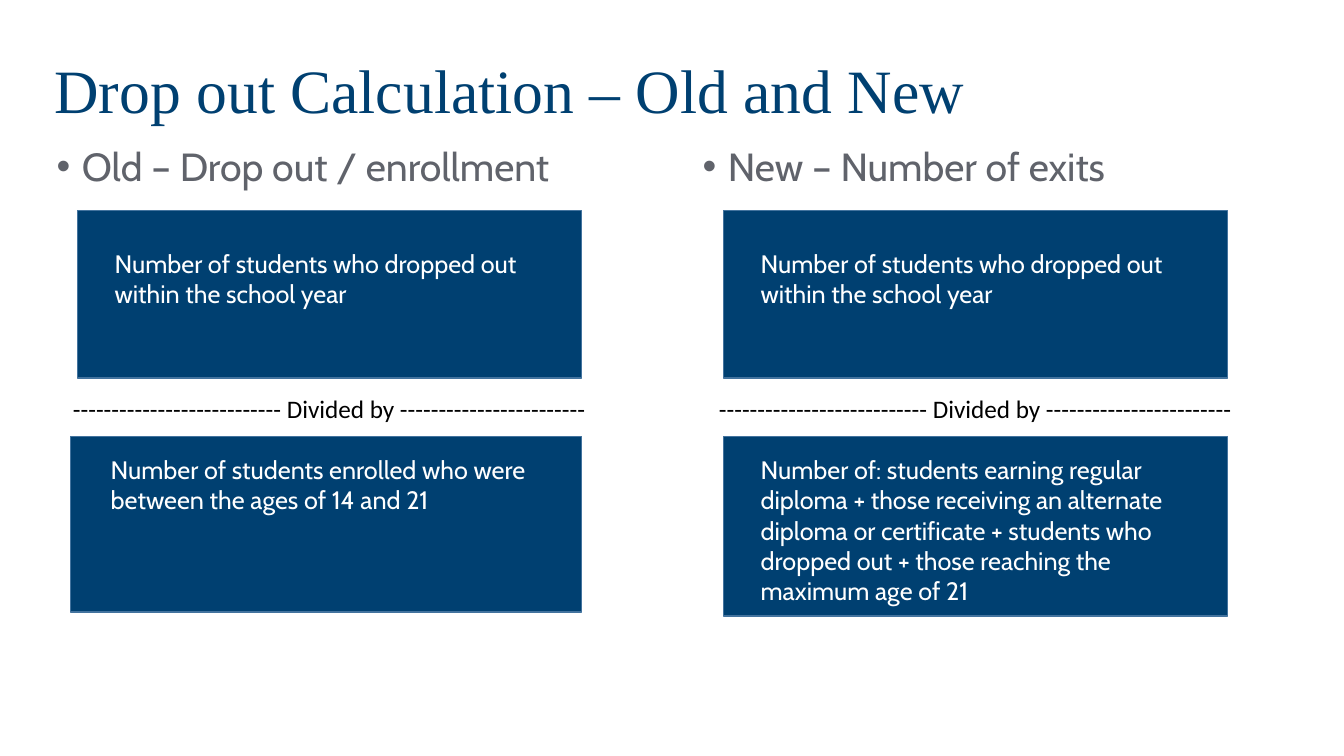
from pptx import Presentation
from pptx import util as u
from pptx.dml.color import RGBColor
from pptx.enum import shapes, text
from pptx.oxml import parse_xml
from pptx.oxml.ns import nsdecls

NAVY, EDGE, GREY, WHITE, BLACK = "004071", "43739E", "60636B", "FFFFFF", "000000"
COLUMN_STEP = 16.28
DIVIDER = "-" * 27 + " Divided by " + "-" * 24
DROPPED_OUT = "Number of students who dropped out within the school year"
ENROLLED = "Number of students enrolled who were between the ages of 14 and 21"
EXITS = ("Number of: students earning regular diploma + those receiving an alternate "
         "diploma or certificate + students who dropped out + those reaching the "
         "maximum age of 21")


def color(hex_code):
    return RGBColor.from_string(hex_code)


def cm(*lengths):
    return [u.Cm(length) for length in lengths]


def style(paragraph, font_name, size, hex_code, align=text.PP_ALIGN.LEFT):
    paragraph.alignment = align
    paragraph.font.name = font_name
    paragraph.font.size = u.Pt(size)
    paragraph.font.color.rgb = color(hex_code)


def fill_placeholder(holder, area, words, font_name, size, hex_code):
    holder.left, holder.top, holder.width, holder.height = cm(*area)
    frame = holder.text_frame
    frame.text = words
    frame.auto_size = text.MSO_AUTO_SIZE.NONE
    paragraph = frame.paragraphs[0]
    paragraph.line_spacing = 0.9
    paragraph.space_before = u.Pt(0)
    style(paragraph, font_name, size, hex_code)
    return frame


def add_heading(holder, left, words):
    frame = fill_placeholder(holder, (left, 3.58, 15.24, 12.98), words, "Cabin", 28, GREY)
    properties = frame.paragraphs[0]._p.get_or_add_pPr()
    properties.set("marL", str(u.Cm(0.64)))
    properties.set("indent", str(-u.Cm(0.64)))
    properties.append(parse_xml(f'<a:buFont {nsdecls("a")} typeface="Arial"/>'))
    properties.append(parse_xml(f'<a:buChar {nsdecls("a")} char="•"/>'))
    style(frame.paragraphs[0], "Cabin", 28, GREY)


def add_label(parent, area, words, font_name, hex_code, align=text.PP_ALIGN.LEFT):
    frame = parent.add_textbox(*cm(*area)).text_frame
    frame.word_wrap = True
    frame.auto_size = text.MSO_AUTO_SIZE.SHAPE_TO_FIT_TEXT
    frame.text = words
    style(frame.paragraphs[0], font_name, 18, hex_code, align)


def add_term(slide, box_area, label_area, words):
    term = slide.shapes.add_group_shape().shapes
    box = term.add_shape(shapes.MSO_SHAPE.RECTANGLE, *cm(*box_area))
    box.shadow.inherit = False
    box.fill.solid()
    box.fill.fore_color.rgb = color(NAVY)
    box.line.color.rgb = color(EDGE)
    box.line.width = u.Pt(1)
    add_label(term, label_area, words, "Cabin", WHITE)


def add_fraction(slide, shift, lower_box, lower_label, denominator):
    add_term(slide, (1.96 + shift, 5.31, 12.7, 4.22),
             (2.64 + shift, 6.13, 11.35, 1.8), DROPPED_OUT)
    add_label(slide.shapes, (1.5 + shift, 9.78, 13.59, 1.02), DIVIDER,
              "Calibri", BLACK, text.PP_ALIGN.CENTER)
    add_term(slide, lower_box, lower_label, denominator)


def main():
    deck = Presentation()
    deck.slide_width, deck.slide_height = cm(33.87, 19.05)
    slide = deck.slides.add_slide(deck.slide_layouts[3])
    title, old_heading, new_heading = slide.placeholders

    title_frame = fill_placeholder(title, (1.12, 0.41, 31.57, 3.89),
                                   "Drop out Calculation – Old and New",
                                   "Times New Roman", 44, NAVY)
    title_frame.vertical_anchor = text.MSO_ANCHOR.MIDDLE
    add_heading(old_heading, 1.17, "Old – Drop out / enrollment")
    add_heading(new_heading, 1.17 + COLUMN_STEP, "New – Number of exits")

    add_fraction(slide, 0, (1.78, 11, 12.88, 4.42), (2.54, 11.33, 11.35, 1.5), ENROLLED)
    add_fraction(slide, COLUMN_STEP, (18.24, 11, 12.7, 4.52),
                 (18.92, 11.33, 11.35, 4.11), EXITS)

    deck.save("out.pptx")


if __name__ == "__main__":
    main()
